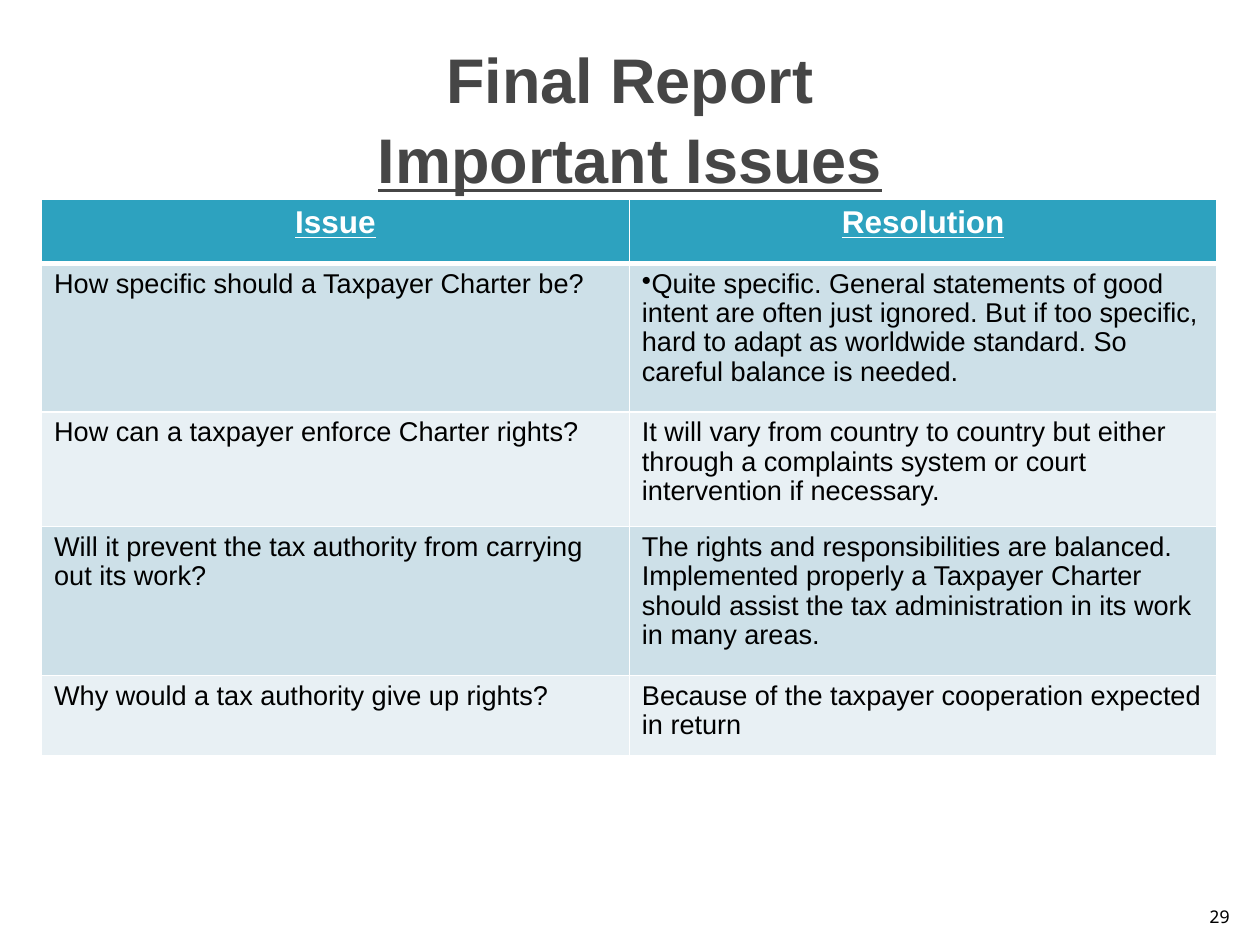
from dataclasses import dataclass

from lxml.etree import SubElement
from pptx import Presentation
from pptx.dml.color import RGBColor
from pptx.enum.text import MSO_ANCHOR as Anchor, PP_ALIGN as Align
from pptx.oxml.ns import qn
from pptx.util import Inches, Pt


@dataclass(frozen=True)
class Theme:
    font: str = "Arial"
    number_font: str = "Noto Sans Mono"
    title: str = "464646"
    header: str = "2DA2BF"
    bands: tuple = ("CDE0E8", "E8F0F4")
    light: str = "FFFFFF"
    dark: str = "000000"
    title_size: float = 36
    header_size: float = 18
    body_size: float = 15.5
    number_size: float = 10
    title_spacing: float = 1.05
    body_spacing: float = 0.97


THEME = Theme()
BULLET = "•"
HEADINGS = ("Issue", "Resolution")
ISSUES = (
    ("How specific should a Taxpayer Charter be?",
     BULLET + "Quite specific. General statements of good intent are often just "
     "ignored. But if too specific, hard to adapt as worldwide standard. So "
     "careful balance is needed."),
    ("How can a taxpayer enforce Charter rights?",
     "It will vary from country to country but either through a complaints "
     "system or court intervention if necessary."),
    ("Will it prevent the tax authority from carrying out its work?",
     "The rights and responsibilities are balanced. Implemented properly a "
     "Taxpayer Charter should assist the tax administration in its work in "
     "many areas."),
    ("Why would a tax authority give up rights?",
     "Because of the taxpayer cooperation expected in return"),
)
ROW_HEIGHTS = (0.51, 1.18, 0.91, 1.18, 0.64)


def format_runs(paragraph, size, color, font=THEME.font, bold=False):
    for run in paragraph.runs:
        run.font.size = Pt(size)
        run.font.name = font
        run.font.bold = bold
        run.font.color.rgb = RGBColor.from_string(color)


def add_text(slide, box, text, anchor, align):
    """Add a one-paragraph text box and return its paragraph."""
    frame = slide.shapes.add_textbox(*map(Inches, box)).text_frame
    frame.word_wrap = True
    frame.vertical_anchor = anchor
    paragraph = frame.paragraphs[0]
    paragraph.text = text
    paragraph.alignment = align
    return paragraph


def add_title(slide, box):
    paragraph = add_text(slide, box, "Final Report\vImportant Issues",
                         Anchor.MIDDLE, Align.CENTER)
    paragraph.line_spacing = THEME.title_spacing
    format_runs(paragraph, THEME.title_size, THEME.title, bold=True)
    paragraph.runs[-1].font.underline = True


def add_page_number(slide, box):
    paragraph = add_text(slide, box, "29", Anchor.BOTTOM, Align.RIGHT)
    format_runs(paragraph, THEME.number_size, THEME.dark, THEME.number_font)


def paint_cell(cell, color, top=1, bottom=1):
    """Draw light borders, widths in points, then fill the cell."""
    properties = cell._tc.get_or_add_tcPr()
    for side, width in (("L", 1), ("R", 1), ("T", top), ("B", bottom)):
        line = SubElement(properties, qn(f"a:ln{side}"), w=str(Pt(width)))
        fill = SubElement(line, qn("a:solidFill"))
        SubElement(fill, qn("a:srgbClr"), val=THEME.light)
    cell.fill.solid()
    cell.fill.fore_color.rgb = RGBColor.from_string(color)


def fill_header(cell, text):
    paint_cell(cell, THEME.header, bottom=3)
    paragraph = cell.text_frame.paragraphs[0]
    paragraph.text = text
    paragraph.alignment = Align.CENTER
    format_runs(paragraph, THEME.header_size, THEME.light, bold=True)
    paragraph.runs[0].font.underline = True


def fill_body(cell, text, row):
    paint_cell(cell, THEME.bands[(row - 1) % 2], top=3 if row == 1 else 1)
    paragraph = cell.text_frame.paragraphs[0]
    paragraph.text = text.removeprefix(BULLET)
    paragraph.line_spacing = THEME.body_spacing
    if text.startswith(BULLET):
        properties = paragraph._p.get_or_add_pPr()
        properties.set("marL", "0")
        properties.set("indent", "0")
        SubElement(properties, qn("a:buChar"), char=BULLET)
    format_runs(paragraph, THEME.body_size, THEME.dark)


def add_issue_table(slide, box):
    table = slide.shapes.add_table(len(ISSUES) + 1, len(HEADINGS),
                                   *map(Inches, box)).table
    for column in table.columns:
        column.width = Inches(box[2] / len(HEADINGS))
    for row, height in zip(table.rows, ROW_HEIGHTS):
        row.height = Inches(height)
    for column, heading in enumerate(HEADINGS):
        fill_header(table.cell(0, column), heading)
    for row, texts in enumerate(ISSUES, start=1):
        for column, text in enumerate(texts):
            fill_body(table.cell(row, column), text, row)


def main():
    presentation = Presentation()
    presentation.slide_width, presentation.slide_height = Inches(10), Inches(7.5)
    slide = presentation.slides.add_slide(presentation.slide_layouts[6])
    add_page_number(slide, (9.46, 7.01, 0.4, 0.4))
    add_title(slide, (0.5, 0.3, 9, 1.25))
    add_issue_table(slide, (0.33, 1.58, 9.33, sum(ROW_HEIGHTS)))
    presentation.save("out.pptx")


if __name__ == "__main__":
    main()
